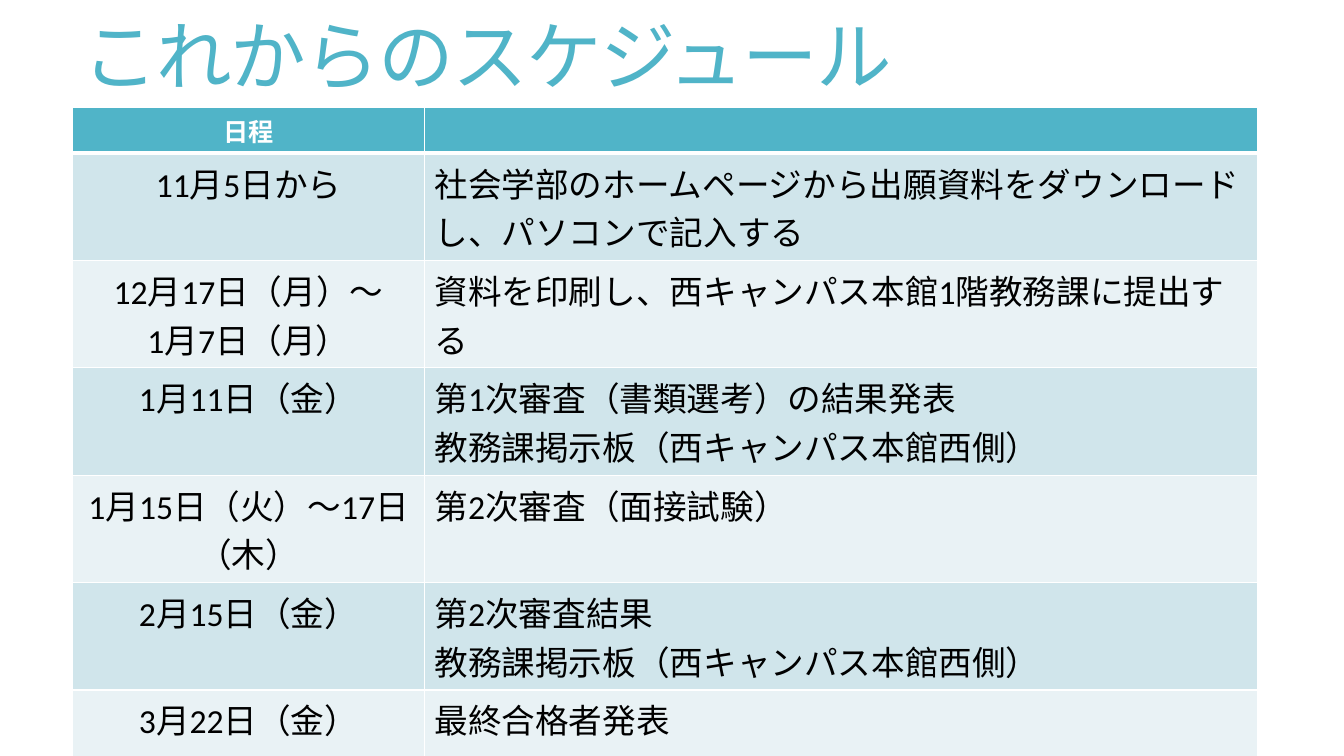
from dataclasses import dataclass

from lxml.etree import SubElement
from pptx import Presentation
from pptx.dml.color import RGBColor
from pptx.enum.text import MSO_ANCHOR, PP_ALIGN
from pptx.oxml.ns import qn
from pptx.util import Emu, Pt

PX = 4572  # EMU in one px, 200 px to the inch
FONT = "Calibri"
COLORS = {
    "teal": "50B4C8",
    "band": "D0E5EB",
    "pale": "E9F2F5",
    "white": "FFFFFF",
    "black": "000000",
}
LEFT, TOP = 144, 213
WIDTHS = (698, 1653)
HEAD, BODY, LAST = 91, 213, 184


@dataclass
class Entry:
    date: str
    event: str
    height: int = BODY


@dataclass
class Look:
    fill: str
    ink: str
    size: int
    bold: bool
    top: int
    base: int


ENTRIES = [
    Entry("日程", "", HEAD),
    Entry("11月5日から",
          "社会学部のホームページから出願資料をダウンロードし、パソコンで記入する"),
    Entry("12月17日（月）～\n1月7日（月）",
          "資料を印刷し、西キャンパス本館1階教務課に提出する"),
    Entry("1月11日（金）",
          "第1次審査（書類選考）の結果発表\n教務課掲示板（西キャンパス本館西側）"),
    Entry("1月15日（火）～17日（木）", "第2次審査（面接試験）"),
    Entry("2月15日（金）",
          "第2次審査結果\n教務課掲示板（西キャンパス本館西側）"),
    Entry("3月22日（金）", "最終合格者発表", LAST),
]


def px(count: int) -> Emu:
    return Emu(count * PX)


def color(name: str) -> RGBColor:
    return RGBColor.from_string(COLORS[name])


def style(font, size: int, ink: str, bold: bool = False) -> None:
    font.name = FONT
    font.size = Pt(size)
    font.bold = bold
    font.color.rgb = color(ink)


def edge(cell, side: str, width: int) -> None:
    props = cell._tc.get_or_add_tcPr()
    line = SubElement(props, qn(f"a:ln{side}"), w=str(Pt(width)))
    fill = SubElement(line, qn("a:solidFill"))
    SubElement(fill, qn("a:srgbClr"), val=COLORS["white"])


def fill_cell(cell, text: str, look: Look, align: PP_ALIGN) -> None:
    for side, width in zip("LRTB", (1, 1, look.top, look.base)):
        edge(cell, side, width)
    cell.fill.solid()
    cell.fill.fore_color.rgb = color(look.fill)
    cell.text_frame.text = text
    for para in cell.text_frame.paragraphs:
        para.alignment = align
        for run in para.runs:
            style(run.font, look.size, look.ink, look.bold)


def pick_look(index: int) -> Look:
    if index == 0:
        return Look("teal", "white", 18, True, 1, 3)
    fill = "band" if index % 2 else "pale"
    return Look(fill, "black", 24, False, 3 if index == 1 else 1, 1)


def add_title(slide, text: str) -> None:
    box = slide.shapes.add_textbox(px(LEFT), px(0), px(2356), px(242))
    frame = box.text_frame
    frame.word_wrap = True
    frame.vertical_anchor = MSO_ANCHOR.MIDDLE
    frame.text = text
    para = frame.paragraphs[0]
    para.line_spacing = 0.85
    run = para.runs[0]
    style(run.font, 54, "teal")
    run._r.get_or_add_rPr().set("spc", "-120")


def add_plan(slide) -> None:
    high = sum(entry.height for entry in ENTRIES)
    table = slide.shapes.add_table(
        len(ENTRIES), len(WIDTHS), px(LEFT), px(TOP), px(sum(WIDTHS)), px(high)
    ).table
    for column, width in zip(table.columns, WIDTHS):
        column.width = px(width)
    for index, entry in enumerate(ENTRIES):
        table.rows[index].height = px(entry.height)
        look = pick_look(index)
        fill_cell(table.cell(index, 0), entry.date, look, PP_ALIGN.CENTER)
        fill_cell(table.cell(index, 1), entry.event, look, PP_ALIGN.LEFT)


def main() -> None:
    deck = Presentation()
    deck.slide_width, deck.slide_height = px(2666), px(1500)
    slide = deck.slides.add_slide(deck.slide_layouts[6])
    # Heading
    add_title(slide, "これからのスケジュール")
    # Schedule table
    add_plan(slide)
    deck.save("out.pptx")


if __name__ == "__main__":
    main()
